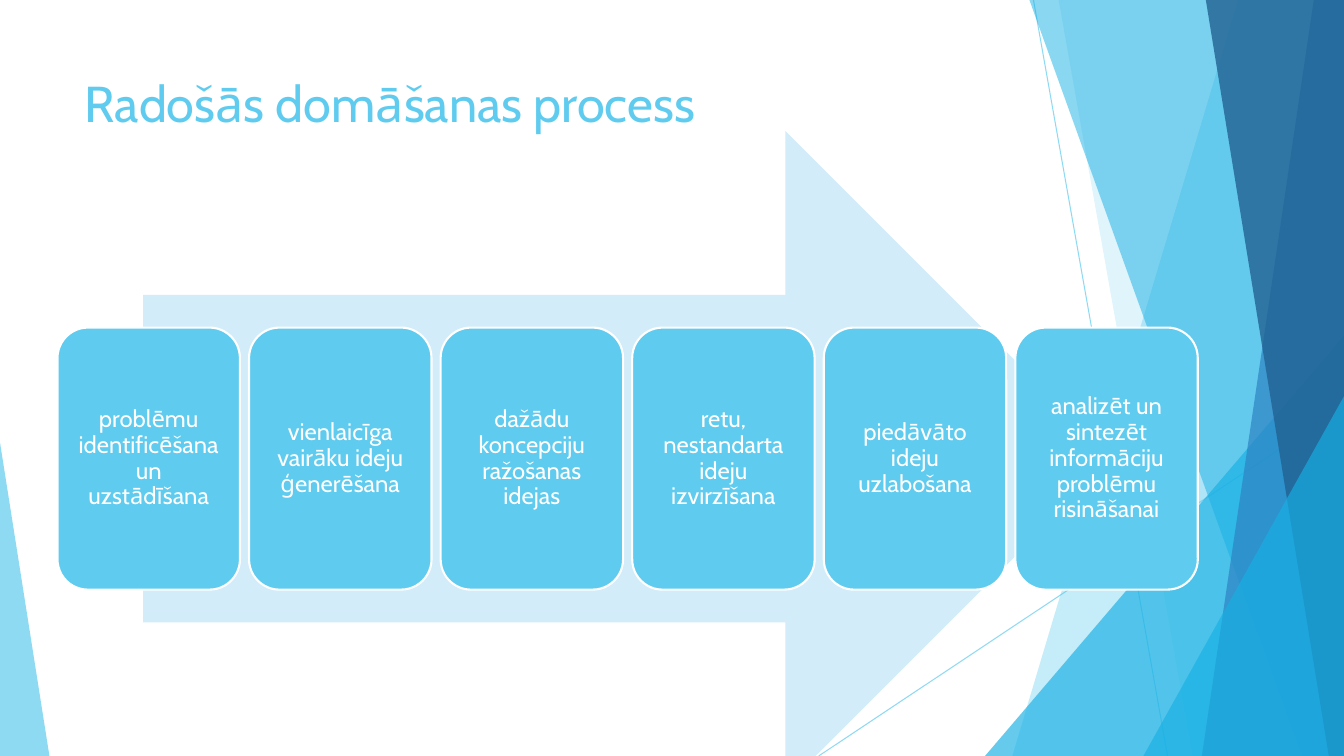
import pptx
import pptx.util
import pptx.dml.color
import pptx.enum.shapes
import pptx.enum.text
import pptx.oxml
import pptx.oxml.ns
from pptx.util import Inches

# Content
TITLE = "Radošās domāšanas process"
STEPS = [
    "problēmu identificēšana un uzstādīšana",
    "vienlaicīga vairāku ideju ģenerēšana",
    "dažādu koncepciju ražošanas idejas",
    "retu, nestandarta ideju izvirzīšana",
    "piedāvāto ideju uzlabošana",
    "analizēt un sintezēt informāciju problēmu risināšanai",
]

THEME = {
    "font": "Cabin", "title_size": 36, "step_size": 17,
    "sky": "5FCBEF", "cyan": "17B0E4", "blue": "2E83C3", "navy": "226292",
    "pale": "D2ECF9", "white": "FFFFFF",
}
WIDTH, HEIGHT = 13.33, 7.5

# Background: thin lines, then facets from back to front
RAYS = [((10.25, 0), (11.58, HEIGHT)), ((WIDTH, 4.03), (8.12, HEIGHT))]
# Bands reach the right edge: (top x, bottom x, colour, opacity)
# Wedges stand on the bottom edge: (left, top, width, apex, colour, opacity)
FACETS = [
    ("band", 12.28, 10.04, "sky", 36),
    ("band", 10.5, 11.83, "sky", 20),
    ("wedge", 9.77, 3.33, 3.56, 1, "cyan", 66),
    ("band", 10.21, 12.91, "cyan", 50),
    ("band", 13.03, 11.92, "blue", 70),
    ("band", 11.96, 13.18, "navy", 80),
    ("wedge", 11.34, 3.93, 1.99, 1, "cyan", 66),
    ("wedge", 0, 4.39, 0.49, 0, "sky", 70),
]

# Step cards
CARD_LEFT, CARD_TOP, CARD_WIDTH, CARD_HEIGHT, CARD_GAP = 0.57, 3.25, 1.81, 2.6, 0.09
CARD_INSET = 0.07


def rgb(name):
    return pptx.dml.color.RGBColor.from_string(THEME[name])


def set_opacity(fill_parent, percent):
    color = fill_parent.find(".//" + pptx.oxml.ns.qn("a:srgbClr"))
    alpha = pptx.oxml.parse_xml(
        f'<a:alpha {pptx.oxml.ns.nsdecls("a")} val="{percent * 1000}"/>')
    color.append(alpha)


def paint(shape, color, opacity=100, outline=None):
    shape.shadow.inherit = False
    shape.fill.solid()
    shape.fill.fore_color.rgb = rgb(color)
    if opacity < 100:
        set_opacity(shape._element.spPr, opacity)
    if outline:
        shape.line.color.rgb = rgb(outline)
        shape.line.width = pptx.util.Pt(1.5)
    else:
        shape.line.fill.background()


def write(shape, text, *, size, color, align, anchor, inset=None, spacing=None):
    frame = shape.text_frame
    frame.word_wrap = True
    frame.auto_size = pptx.enum.text.MSO_AUTO_SIZE.NONE
    frame.vertical_anchor = anchor
    if inset is not None:
        frame.margin_left = frame.margin_right = Inches(inset)
        frame.margin_top = frame.margin_bottom = Inches(inset)
    para = frame.paragraphs[0]
    para.alignment = align
    if spacing:
        para.line_spacing = spacing
    span = para.add_run()
    span.text = text
    span.font.name = THEME["font"]
    span.font.size = pptx.util.Pt(size)
    span.font.color.rgb = rgb(color)


def add_ray(page, start, end):
    ray = page.shapes.add_connector(
        pptx.enum.shapes.MSO_CONNECTOR.STRAIGHT, *map(Inches, start + end))
    ray.line.color.rgb = rgb("sky")
    ray.line.width = pptx.util.Pt(0.75)
    properties = ray._element.spPr
    set_opacity(properties, 70)
    properties.append(pptx.oxml.parse_xml(
        f'<a:effectLst {pptx.oxml.ns.nsdecls("a")}/>'))


def add_band(page, top_x, bottom_x, color, opacity):
    outline = page.shapes.build_freeform(Inches(top_x), 0)
    corners = [(WIDTH, 0), (WIDTH, HEIGHT), (bottom_x, HEIGHT)]
    outline.add_line_segments([(Inches(x), Inches(y)) for x, y in corners])
    paint(outline.convert_to_shape(), color, opacity)


def add_box(page, kind, left, top, width, height):
    return page.shapes.add_shape(kind, *map(Inches, (left, top, width, height)))


def add_wedge(page, left, top, width, apex, color, opacity):
    wedge = add_box(page, pptx.enum.shapes.MSO_SHAPE.ISOSCELES_TRIANGLE,
                    left, top, width, HEIGHT - top)
    wedge.adjustments[0] = apex
    paint(wedge, color, opacity)


def main():
    deck = pptx.Presentation()
    deck.slide_width, deck.slide_height = Inches(WIDTH), Inches(HEIGHT)
    page = deck.slides.add_slide(deck.slide_layouts[5])
    shapes = pptx.enum.shapes.MSO_SHAPE
    anchors = pptx.enum.text.MSO_ANCHOR
    aligns = pptx.enum.text.PP_ALIGN

    # Background
    for start, end in RAYS:
        add_ray(page, start, end)
    builders = {"band": add_band, "wedge": add_wedge}
    for kind, *facet in FACETS:
        builders[kind](page, *facet)

    # Title
    title = page.shapes.title
    title.left, title.top = Inches(0.74), Inches(0.67)
    title.width, title.height = Inches(9.4), Inches(1.44)
    write(title, TITLE, size=THEME["title_size"], color="sky",
          align=aligns.LEFT, anchor=anchors.TOP)

    # Process arrow
    arrow = add_box(page, shapes.RIGHT_ARROW, 1.42, 1.3, 9.62, 6.5)
    paint(arrow, "pale")

    # Steps
    for index, step in enumerate(STEPS):
        left = CARD_LEFT + index * (CARD_WIDTH + CARD_GAP)
        card = add_box(page, shapes.ROUNDED_RECTANGLE,
                       left, CARD_TOP, CARD_WIDTH, CARD_HEIGHT)
        paint(card, "sky", outline="white")
        write(card, step, size=THEME["step_size"], color="white",
              align=aligns.CENTER, anchor=anchors.MIDDLE,
              inset=CARD_INSET, spacing=0.9)

    deck.save("out.pptx")


if __name__ == "__main__":
    main()
